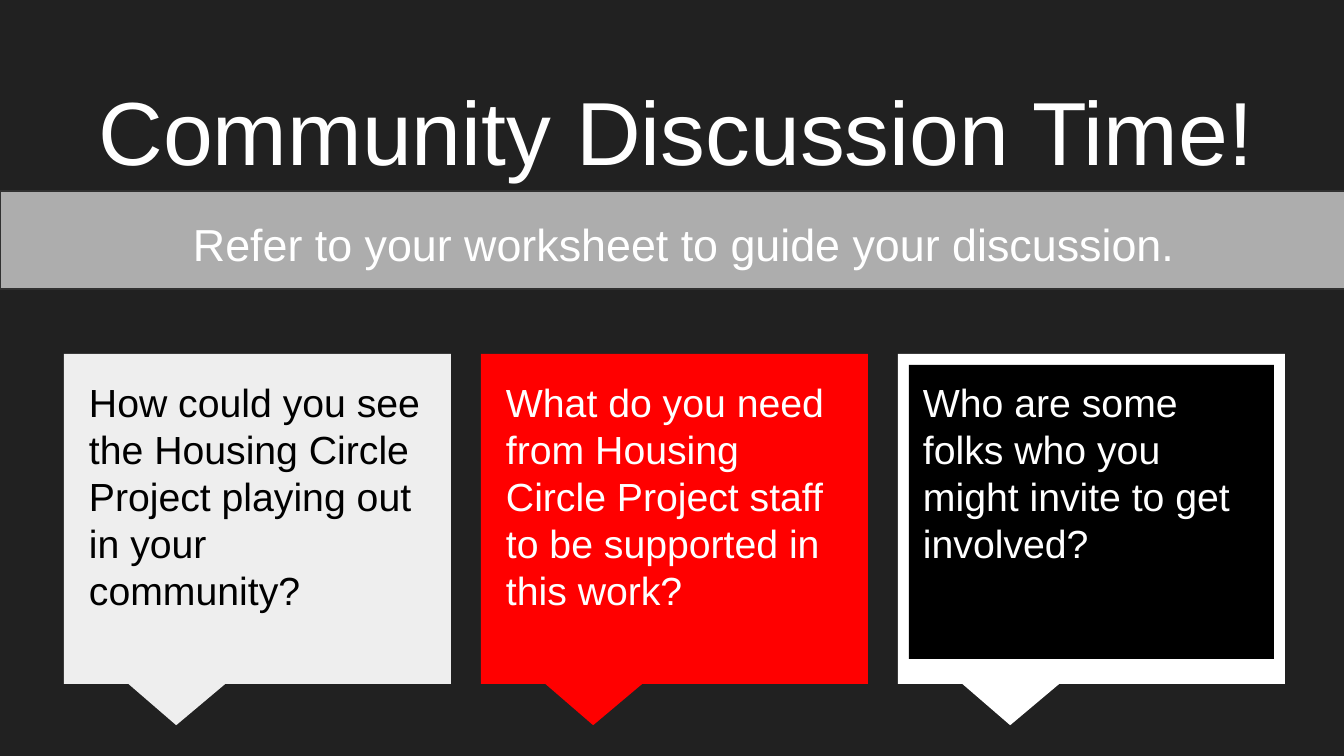
from pptx import Presentation
from pptx import util as u
from pptx.dml.color import RGBColor
from pptx.enum import shapes, text

SCALE = 914400 / 134.4  # EMU in one px
FONT = "Arial"
WHITE, BLACK = "FFFFFF", "000000"
CARDS = [
    ("EEEEEE", None, BLACK,
     "How could you see the Housing Circle Project playing out in your community?"),
    ("FF0000", None, WHITE,
     "What do you need from Housing Circle Project staff to be supported in this work?"),
    (WHITE, BLACK, WHITE,
     "Who are some folks who you might invite to get involved?"),
]


def px(n):
    return u.Emu(round(n * SCALE))


def paint(target, color):
    """Give a fill or a line a solid colour."""
    target.solid()
    target.fore_color.rgb = RGBColor.from_string(color)


def place(shape, x, y, w, h):
    shape.left, shape.top, shape.width, shape.height = map(px, (x, y, w, h))


def add_box(slide, kind, x, y, w, h, fill, line=None):
    box = slide.shapes.add_shape(kind, *map(px, (x, y, w, h)))
    box.shadow.inherit = False
    paint(box.fill, fill)
    if line:
        paint(box.line.fill, line)
        box.line.width = u.Pt(0.75)
    else:
        box.line.fill.background()
    return box


def write(shape, words, size, color, align, after=0):
    frame = shape.text_frame
    frame.text = words
    frame.word_wrap = True
    frame.auto_size = text.MSO_AUTO_SIZE.NONE
    frame.vertical_anchor = text.MSO_ANCHOR.TOP
    frame.margin_left = px(14)
    frame.margin_right = frame.margin_top = frame.margin_bottom = px(13)
    para = frame.paragraphs[0]
    para.alignment = align
    para.line_spacing = 1.0
    para.space_before = u.Pt(0)
    para.space_after = u.Pt(after)
    font = para.runs[0].font
    font.name, font.size = FONT, u.Pt(size)
    font.color.rgb = RGBColor.from_string(color)


def add_card(slide, x, y, fill, panel, ink, words):
    """Callout with a question inset by 11 px, on a panel if one is given."""
    card = add_box(slide, shapes.MSO_SHAPE.RECTANGULAR_CALLOUT, x, y, 387, 330, fill)
    card.adjustments[0] = -0.21
    card.adjustments[1] = 0.625
    area = (x + 11, y + 11, 365, 294)
    if panel:
        body = add_box(slide, shapes.MSO_SHAPE.RECTANGLE, *area, panel)
    else:
        body = slide.shapes.add_textbox(*map(px, area))
    write(body, words, 21, ink, text.PP_ALIGN.LEFT, after=12)


def main():
    deck = Presentation()
    deck.slide_width, deck.slide_height = px(1344), px(756)
    slide = deck.slides.add_slide(deck.slide_layouts[5])
    paint(slide.background.fill, "212121")

    # Title
    title = slide.shapes.title
    place(title, 42, 63, 1267, 150)
    write(title, "Community Discussion Time!", 48, WHITE, text.PP_ALIGN.CENTER)

    # Band with the instruction
    add_box(slide, shapes.MSO_SHAPE.RECTANGLE, 0, 191, 1352, 98, "ADADAD", "303030")
    hint = slide.shapes.add_textbox(*map(px, (81, 204, 1204, 71)))
    write(hint, "Refer to your worksheet to guide your discussion.", 24, WHITE,
          text.PP_ALIGN.CENTER)

    # Question cards
    for i, card in enumerate(CARDS):
        add_card(slide, 64 + 417 * i, 354, *card)

    deck.save("out.pptx")


if __name__ == "__main__":
    main()
